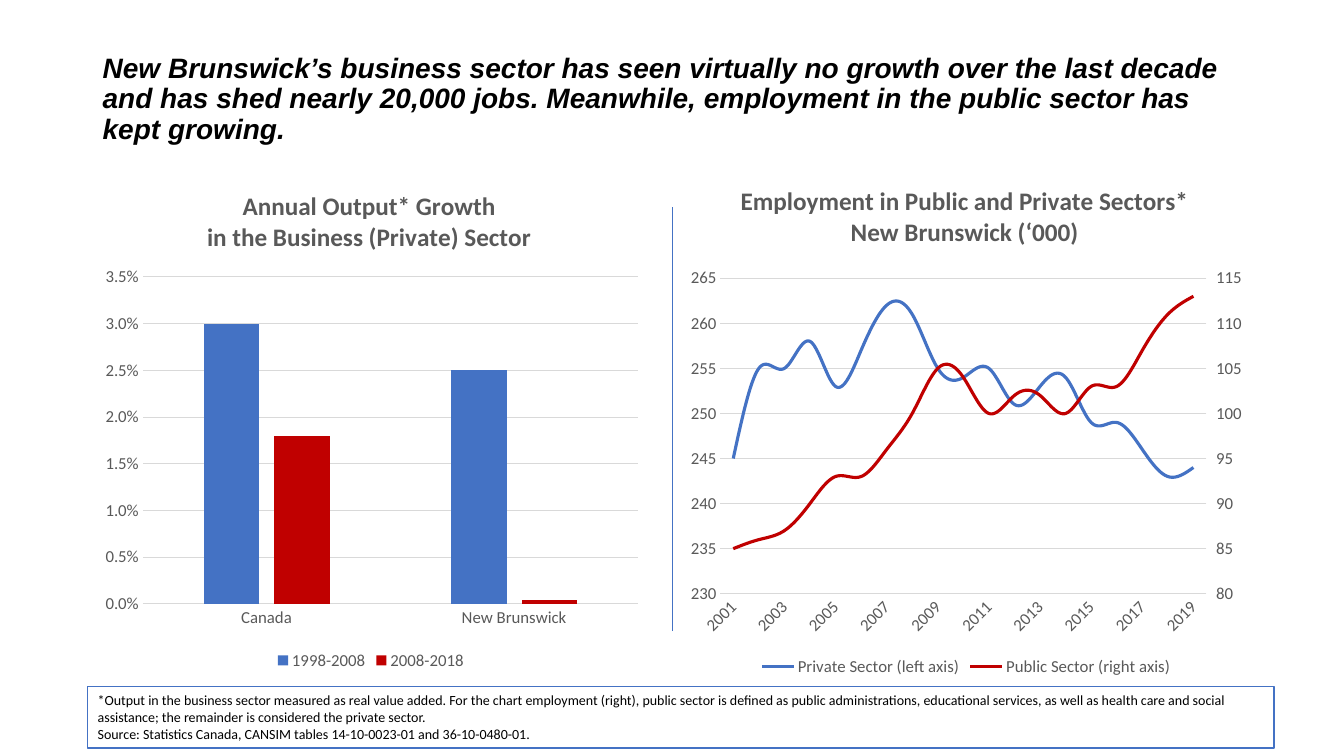
"""Build a slide with output growth and employment charts for New Brunswick."""
from copy import deepcopy

from lxml import etree
from pptx import Presentation
from pptx.chart.data import CategoryChartData
from pptx.dml.color import RGBColor
from pptx.enum.chart import (XL_CHART_TYPE, XL_LEGEND_POSITION, XL_MARKER_STYLE,
                             XL_TICK_MARK)
from pptx.enum.shapes import MSO_CONNECTOR, MSO_SHAPE
from pptx.enum.text import MSO_ANCHOR, PP_ALIGN
from pptx.oxml.ns import qn
from pptx.util import Inches, Pt

BARS, LINES = XL_CHART_TYPE.COLUMN_CLUSTERED, XL_CHART_TYPE.LINE
BOTTOM, NO_TICK = XL_LEGEND_POSITION.BOTTOM, XL_TICK_MARK.NONE
NO_MARK = XL_MARKER_STYLE.NONE
MIDDLE, LEFT, CENTER = MSO_ANCHOR.MIDDLE, PP_ALIGN.LEFT, PP_ALIGN.CENTER
BLUE, RED, GRAY, PALE = "4472C4", "C00000", "595959", "D9D9D9"
BLACK, WHITE = "000000", "FFFFFF"


def tint(fill, color):
    fill.solid()
    fill.fore_color.rgb = RGBColor.from_string(color)


def write(frame, text, size=12, color=BLACK, font="Calibri", bold=False,
          italic=False, align=LEFT, spacing=None):
    frame.word_wrap = True
    frame.vertical_anchor = MIDDLE
    for i, line in enumerate(text.split("\n")):
        para = frame.add_paragraph() if i else frame.paragraphs[0]
        para.alignment = align
        if spacing:
            para.line_spacing = spacing
        run = para.add_run()
        run.text = line
        run.font.size, run.font.name = Pt(size), font
        run.font.bold, run.font.italic = bold, italic
        tint(run.font.fill, color)


deck = Presentation()
deck.slide_width, deck.slide_height = Inches(13.33), Inches(7.5)
col, row = deck.slide_width / 100, deck.slide_height / 100
slide = deck.slides.add_slide(deck.slide_layouts[6])
shapes = slide.shapes

head = shapes.add_textbox(int(6.9 * col), int(5.33 * row),
                          int(86.25 * col), int(15.73 * row))
write(head.text_frame,
      "New Brunswick’s business sector has seen virtually no growth over the "
      "last decade and has shed nearly 20,000 jobs. Meanwhile, employment in "
      "the public sector has kept growing.",
      size=20, font="Arial", bold=True, italic=True, spacing=0.9)

panels = [
    dict(kind=BARS, left=6.9, width=41.4, height=66.53,
         title="Annual Output* Growth\nin the Business (Private) Sector",
         cats=["Canada", "New Brunswick"], span=(0, 0.035, 0.005), fmt="0.0%",
         data={"1998-2008": [0.03, 0.025], "2008-2018": [0.018, 0.0004]},
         spot=dict(x=0.2, y=0.03), plot=dict(x=0.09, y=0.21, w=0.89, h=0.65)),
    dict(kind=LINES, left=50.63, width=42.53, height=67.33,
         title="Employment in Public and Private Sectors*\nNew Brunswick (‘000)",
         cats=[str(year) for year in range(2001, 2020)],
         span=(230, 265, 5), fmt="General",
         data={"Private Sector (left axis)":
               [245, 255, 255, 258, 253, 257, 262, 261, 255, 254,
                255, 251, 253, 254, 249, 249, 246, 243, 244],
               "Public Sector (right axis)":
               [85, 86, 87, 90, 93, 93, 96, 100, 105, 104,
                100, 102, 102, 100, 103, 103, 107, 111, 113]},
         spot=dict(x=0.1, y=0.02), plot=dict(x=0.07, y=0.21, w=0.85, h=0.62)),
]

for panel in panels:
    data = CategoryChartData(number_format=panel["fmt"])
    data.categories = panel["cats"]
    for name, values in panel["data"].items():
        data.add_series(name, values)
    chart = shapes.add_chart(
        panel["kind"], int(panel["left"] * col), int(22.67 * row),
        int(panel["width"] * col), int(panel["height"] * row), data).chart
    chart.has_title = chart.has_legend = True
    write(chart.chart_title.text_frame, panel["title"], size=18, color=GRAY,
          bold=True, align=CENTER)
    chart.chart_title.include_in_layout = False
    chart.legend.position = BOTTOM
    chart.legend.include_in_layout = False

    cat, val = chart.category_axis, chart.value_axis
    for font in (chart.font, chart.legend.font,
                 cat.tick_labels.font, val.tick_labels.font):
        font.size, font.name = Pt(12), "Calibri"
        tint(font.fill, GRAY)
    cat.major_tick_mark = val.major_tick_mark = NO_TICK
    val.minimum_scale, val.maximum_scale, val.major_unit = panel["span"]
    val.tick_labels.number_format = panel["fmt"]
    val.tick_labels.number_format_is_linked = False
    val.has_major_gridlines = True
    for line in (cat.format.line, val.major_gridlines.format.line):
        line.width = Pt(0.75)
        tint(line.fill, PALE)
    val.format.line.fill.background()

    group = chart.plots[0]
    group.vary_by_categories = False
    for series, color in zip(group.series, (BLUE, RED)):
        if panel["kind"] == BARS:
            tint(series.format.fill, color)
        else:
            series.smooth = True
            series.marker.style = NO_MARK
            series.format.line.width = Pt(2.25)
            tint(series.format.line.fill, color)

    root = chart.element
    area = root.xpath(".//c:plotArea")[0]
    title = root.xpath("./c:chart/c:title")[0]
    for node, index, box in ((title, 1, panel["spot"]), (area, 0, panel["plot"])):
        for old in node.findall(qn("c:layout")):
            node.remove(old)
        layout = etree.Element(qn("c:layout"))
        manual = etree.SubElement(layout, qn("c:manualLayout"))
        modes = {"xMode": "edge", "yMode": "edge"}
        if node is area:
            modes = {"layoutTarget": "inner", **modes}
        for key, value in {**modes, **box}.items():
            etree.SubElement(manual, qn("c:" + key)).set("val", str(value))
        node.insert(index, layout)

    if panel["kind"] == BARS:
        group.gap_width, group.overlap = 219, -27
        continue

    root.xpath(".//c:catAx/c:txPr/a:bodyPr")[0].set("rot", "-2700000")
    first = area.find(qn("c:lineChart"))
    second = deepcopy(first)
    first.remove(first.findall(qn("c:ser"))[1])
    second.remove(second.findall(qn("c:ser"))[0])
    first.addnext(second)
    years, right = (deepcopy(area.find(qn(tag))) for tag in ("c:catAx", "c:valAx"))
    area.find(qn("c:valAx")).addnext(right)
    right.addnext(years)
    ids = ["5001", "5002"]
    for link, mark in zip(second.findall(qn("c:axId")), ids):
        link.set("val", mark)
    for axis, own, other in ((years, *ids), (right, *ids[::-1])):
        axis.find(qn("c:axId")).set("val", own)
        axis.find(qn("c:crossAx")).set("val", other)
    years.find(qn("c:delete")).set("val", "1")
    right.remove(right.find(qn("c:majorGridlines")))
    for tag, value in (("axPos", "r"), ("majorTickMark", "out"), ("crosses", "max"),
                       ("scaling/c:min", "80"), ("scaling/c:max", "115")):
        right.xpath("./c:" + tag)[0].set("val", value)

rule = shapes.add_connector(MSO_CONNECTOR.STRAIGHT, int(50 * col),
                            int(83.47 * row), int(50 * col), int(27.33 * row))
rule.line.width = Pt(0.5)
tint(rule.line.fill, BLUE)
etree.SubElement(rule.element.spPr, qn("a:effectLst"))

note = shapes.add_shape(MSO_SHAPE.RECTANGLE, int(6.53 * col), int(90.8 * row),
                        int(88.28 * col), int(8.13 * row))
note.shadow.inherit = False
tint(note.fill, WHITE)
note.line.width = Pt(1)
tint(note.line.fill, BLUE)
write(note.text_frame,
      "*Output in the business sector measured as real value added. For the "
      "chart employment (right), public sector is defined as public "
      "administrations, educational services, as well as health care and social "
      "assistance; the remainder is considered the private sector.\n"
      "Source: Statistics Canada, CANSIM tables 14-10-0023-01 and "
      "36-10-0480-01.", size=10)

deck.save("out.pptx")
